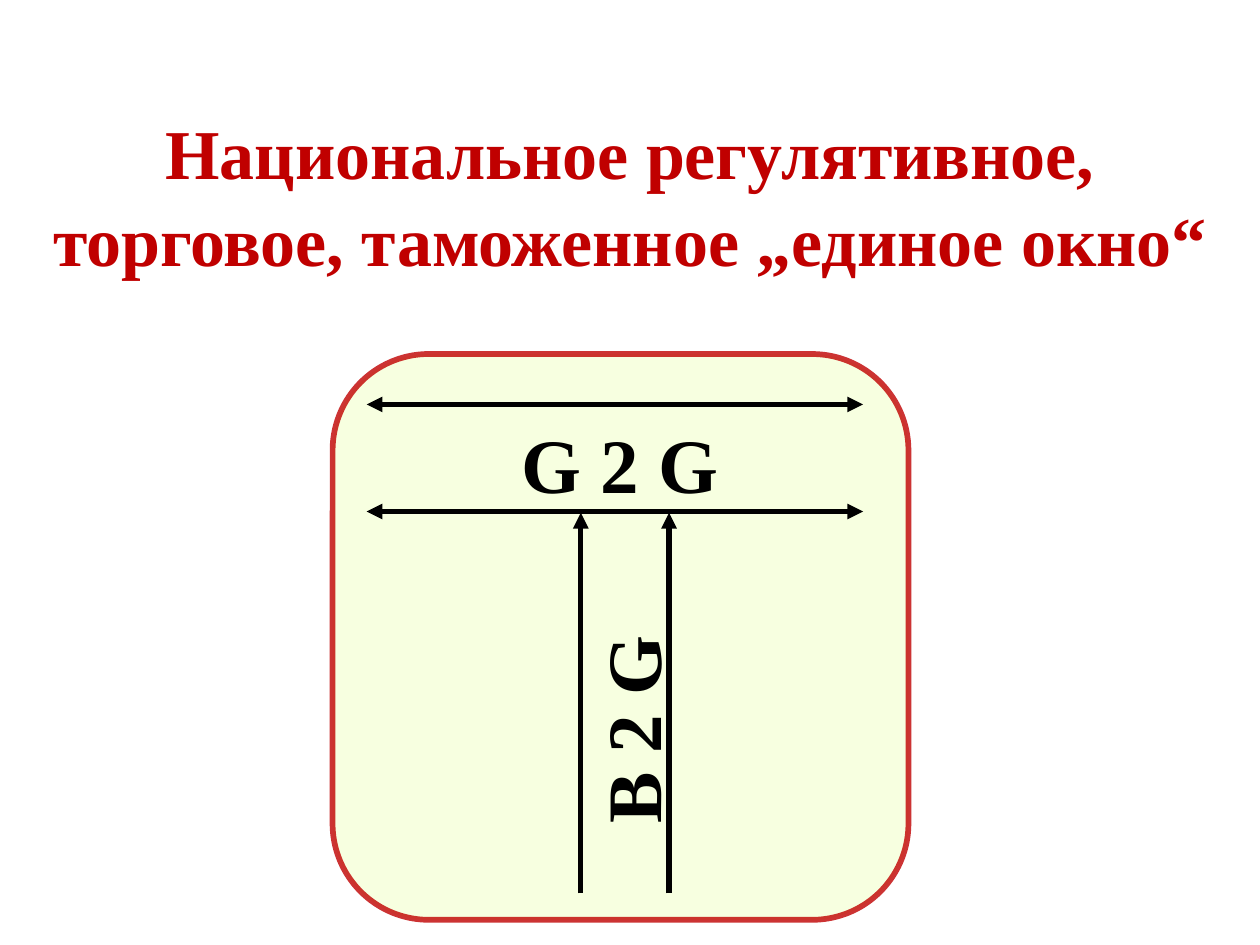
import pptx
import pptx.dml.color
import pptx.enum.dml
import pptx.enum.shapes
import pptx.enum.text
import pptx.oxml
import pptx.oxml.ns
import pptx.util

presentation = pptx.Presentation()
presentation.slide_width = pptx.util.Inches(10)
presentation.slide_height = pptx.util.Inches(7.5)
slide = presentation.slides.add_slide(presentation.slide_layouts[6])

# Grid of 100 columns by 75 rows
column = presentation.slide_width / 100
row = presentation.slide_height / 75


def place(x, y):
    return round(x * column), round(y * row)


def paint(color_format, color, opacity=100):
    color_format.rgb = pptx.dml.color.RGBColor.from_string(color)
    if opacity < 100:
        element = color_format._xFill.find(".//" + pptx.oxml.ns.qn("a:srgbClr"))
        alpha = pptx.oxml.parse_xml(
            f'<a:alpha {pptx.oxml.ns.nsdecls("a")} val="{opacity * 1000}"/>')
        element.append(alpha)


# Rounded panel
diagram = slide.shapes.add_group_shape()
panel = diagram.shapes.add_shape(
    pptx.enum.shapes.MSO_SHAPE.ROUNDED_RECTANGLE,
    *place(26.4, 28.1), *place(45.7, 44.9))
panel.shadow.inherit = False
panel.adjustments[0] = 0.17
panel.fill.solid()
paint(panel.fill.fore_color, "CCFF33", 15)
panel.line.width = pptx.util.Pt(3.25)
panel.line.fill.solid()
paint(panel.line.color, "C00000", 80)

# Title and labels: owner, text, position, size, rotation, points, colour, side and top margins
texts = [
    (slide, "Национальное регулятивное, торговое, таможенное „единое окно“",
     (0, 7.6), (100, 8.7), 0, 40, "C00000", 2, 0.8, 1.04),
    (diagram, "G 2 G ", (36.6, 32), (26.8, 8.7), 0, 44, "000000", 1, 1.1, 1),
    (diagram, "B 2 G", (37.1, 52.8), (26.6, 10.2), 270, 44, "000000", 1, 1.1, 1),
]
for owner, text, position, size, rotation, points, color, side, top, spacing in texts:
    box = owner.shapes.add_textbox(*place(*position), *place(*size))
    box.rotation = rotation
    frame = box.text_frame
    frame.word_wrap = True
    frame.vertical_anchor = pptx.enum.text.MSO_ANCHOR.TOP
    frame.margin_left = frame.margin_right = round(side * column)
    frame.margin_top = round(top * row)
    paragraph = frame.paragraphs[0]
    paragraph.alignment = pptx.enum.text.PP_ALIGN.CENTER
    paragraph.line_spacing = spacing
    run = paragraph.add_run()
    run.text = text
    run.font.name = "Times New Roman"
    run.font.size = pptx.util.Pt(points)
    run.font.bold = True
    paint(run.font.color, color)

# Arrows: two-way across the top, one-way up the stem
arrows = [((29.1, y), (68.5, y), ("headEnd", "tailEnd")) for y in (32.1, 40.6)]
arrows += [((x, 70.9), (x, 40.7), ("tailEnd",)) for x in (46.1, 53.1)]
for start, end, arrowheads in arrows:
    arrow = diagram.shapes.add_connector(
        pptx.enum.shapes.MSO_CONNECTOR.STRAIGHT, *place(*start), *place(*end))
    arrow.line.width = pptx.util.Pt(3)
    arrow.line.fill.solid()
    paint(arrow.line.color, "000000")
    outline = arrow.line._get_or_add_ln()
    for arrowhead in arrowheads:
        outline.append(pptx.oxml.parse_xml(
            f'<a:{arrowhead} {pptx.oxml.ns.nsdecls("a")} type="triangle"/>'))
    arrow._element.spPr.append(pptx.oxml.parse_xml(
        f'<a:effectLst {pptx.oxml.ns.nsdecls("a")}/>'))

presentation.save("out.pptx")
